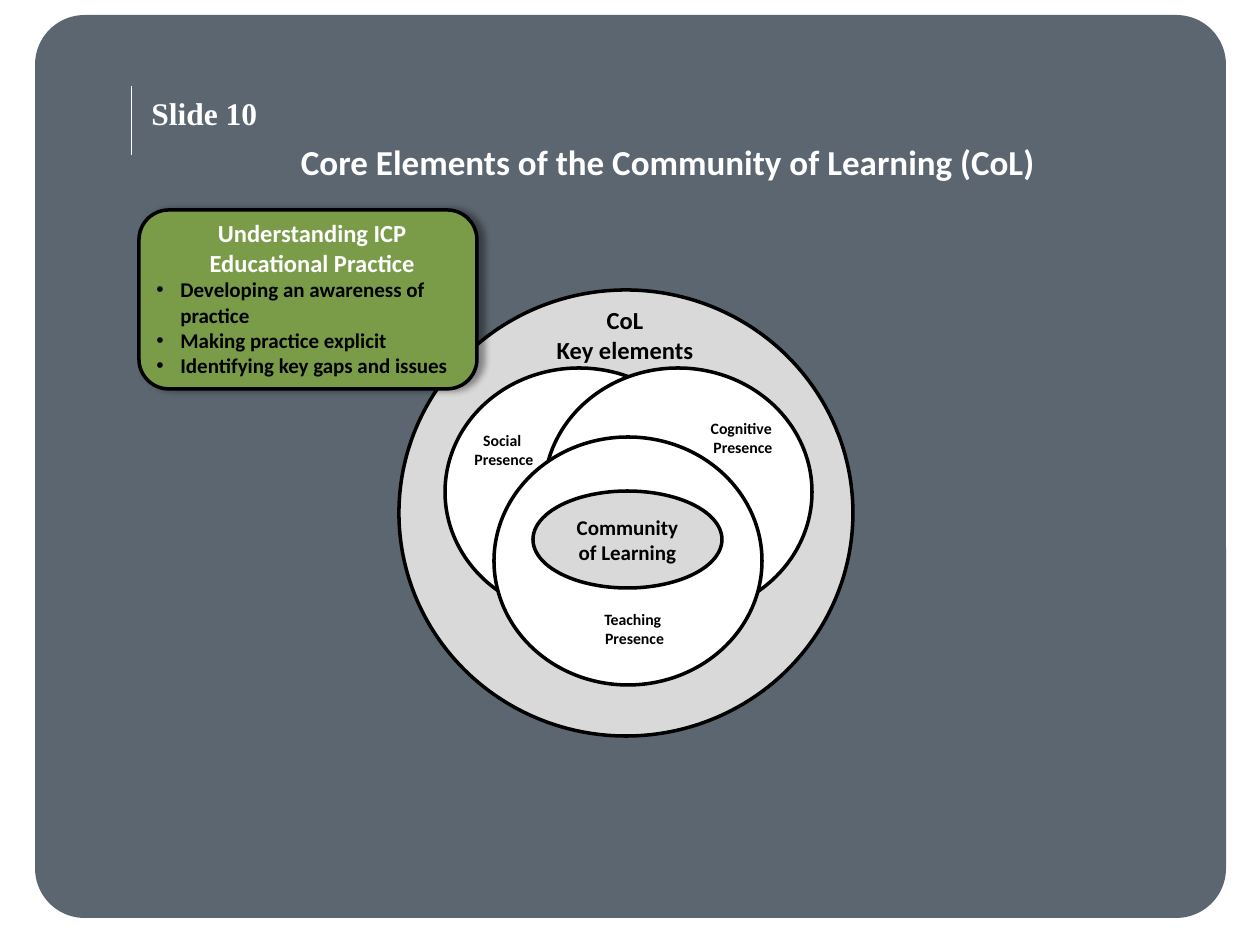
from typing import NamedTuple

from lxml import etree
from pptx import Presentation, util as u
from pptx.dml.color import RGBColor
from pptx.enum import shapes, text
from pptx.oxml.ns import qn

PX = u.Inches(1) / 126
BLACK, WHITE, GREY, GREEN, SLATE = "000000", "FFFFFF", "D9D9D9", "7A9C49", "5C6670"
OVAL, ROUNDED = shapes.MSO_SHAPE.OVAL, shapes.MSO_SHAPE.ROUNDED_RECTANGLE


class Box(NamedTuple):
    left: int
    top: int
    width: int
    height: int


class Label(NamedTuple):
    lines: list[str]
    box: Box
    size: int


def px(length: int) -> u.Emu:
    return u.Emu(round(length * PX))


def place(box: Box) -> list[u.Emu]:
    return [px(length) for length in box]


def colour(target, value: str) -> None:
    target.solid()
    target.fore_color.rgb = RGBColor.from_string(value)


def add_outline(slide, kind, box: Box, fill: str, edge: float = 2):
    shape = slide.shapes.add_shape(kind, *place(box))
    shape.shadow.inherit = False
    colour(shape.fill, fill)
    if edge:
        colour(shape.line.fill, BLACK)
        shape.line.width = u.Pt(edge)
    else:
        shape.line.fill.background()
    return shape


def write(frame, lines: list[str], *, size: int, color: str = BLACK,
          font: str = "Calibri", centred: bool = True, bullet: bool = False,
          append: bool = False) -> None:
    frame.word_wrap = True
    for index, line in enumerate(lines):
        fresh = append or index > 0
        paragraph = frame.add_paragraph() if fresh else frame.paragraphs[0]
        paragraph.alignment = text.PP_ALIGN.CENTER if centred else text.PP_ALIGN.LEFT
        if bullet:
            props = paragraph._p.get_or_add_pPr()
            props.set("marL", str(px(24)))
            props.set("indent", str(-px(24)))
            etree.SubElement(props, qn("a:buFont"), typeface="Arial")
            etree.SubElement(props, qn("a:buChar"), char="•")
        run = paragraph.add_run()
        run.text = line
        run.font.name, run.font.size, run.font.bold = font, u.Pt(size), True
        run.font.color.rgb = RGBColor.from_string(color)


def add_text(slide, box: Box, lines: list[str], **style):
    frame = slide.shapes.add_textbox(*place(box)).text_frame
    write(frame, lines, **style)
    return frame


def cast_shadow(shape) -> None:
    effects = shape._element.spPr.find(qn("a:effectLst"))
    shadow = etree.SubElement(effects, qn("a:outerShdw"), blurRad=str(u.Pt(4)),
                              dist=str(u.Pt(3)), dir="0", algn="tl", rotWithShape="0")
    tint = etree.SubElement(shadow, qn("a:srgbClr"), val=BLACK)
    etree.SubElement(tint, qn("a:alpha"), val="40000")


def add_frame(slide) -> None:
    panel = add_outline(slide, ROUNDED, Box(35, 15, 1191, 903), SLATE, edge=0)
    panel.adjustments[0] = 0.055
    rule = slide.shapes.add_connector(shapes.MSO_CONNECTOR.STRAIGHT,
                                      px(131), px(86), px(131), px(155))
    colour(rule.line.fill, WHITE)
    rule.line.width = u.Pt(0.25)
    etree.SubElement(rule._element.spPr, qn("a:effectLst"))


def add_community(slide) -> None:
    add_outline(slide, OVAL, Box(399, 290, 454, 446), GREY)
    for left, top in [(445, 368), (544, 368), (494, 437)]:
        add_outline(slide, OVAL, Box(left, top, 268, 248), WHITE)
    labels = [
        Label(["CoL", "Key elements"], Box(520, 299, 210, 72), 14),
        Label(["Social ", "Presence"], Box(454, 425, 100, 50), 9),
        Label(["Teaching ", "Presence"], Box(586, 604, 97, 50), 9),
        Label(["Cognitive ", "Presence"], Box(693, 413, 100, 50), 9),
    ]
    for label in labels:
        add_text(slide, label.box, label.lines, size=label.size)
    core = add_outline(slide, OVAL, Box(533, 491, 189, 97), GREY)
    core.text_frame.vertical_anchor = text.MSO_ANCHOR.MIDDLE
    write(core.text_frame, ["Community of Learning"], size=12)


def add_practice(slide) -> None:
    cast_shadow(add_outline(slide, ROUNDED, Box(139, 210, 338, 179), GREEN))
    frame = add_text(slide, Box(144, 212, 338, 174),
                     ["Understanding ICP Educational Practice"], size=14, color=WHITE)
    frame.margin_right = px(14)
    write(frame, ["Developing an awareness of practice", "Making practice explicit",
                  "Identifying key gaps and issues"],
          size=12, centred=False, bullet=True, append=True)


def main() -> None:
    deck = Presentation()
    deck.slide_width, deck.slide_height = u.Inches(10), u.Inches(7.5)
    slide = deck.slides.add_slide(deck.slide_layouts[6])
    add_frame(slide)
    add_text(slide, Box(238, 134, 860, 69),
             ["Core Elements of the Community of Learning (CoL)"], size=20, color=WHITE)
    add_community(slide)
    add_practice(slide)
    add_text(slide, Box(139, 88, 199, 50), ["Slide 10"], size=18, color=WHITE,
             font="Times New Roman", centred=False)
    deck.save("out.pptx")


if __name__ == "__main__":
    main()
